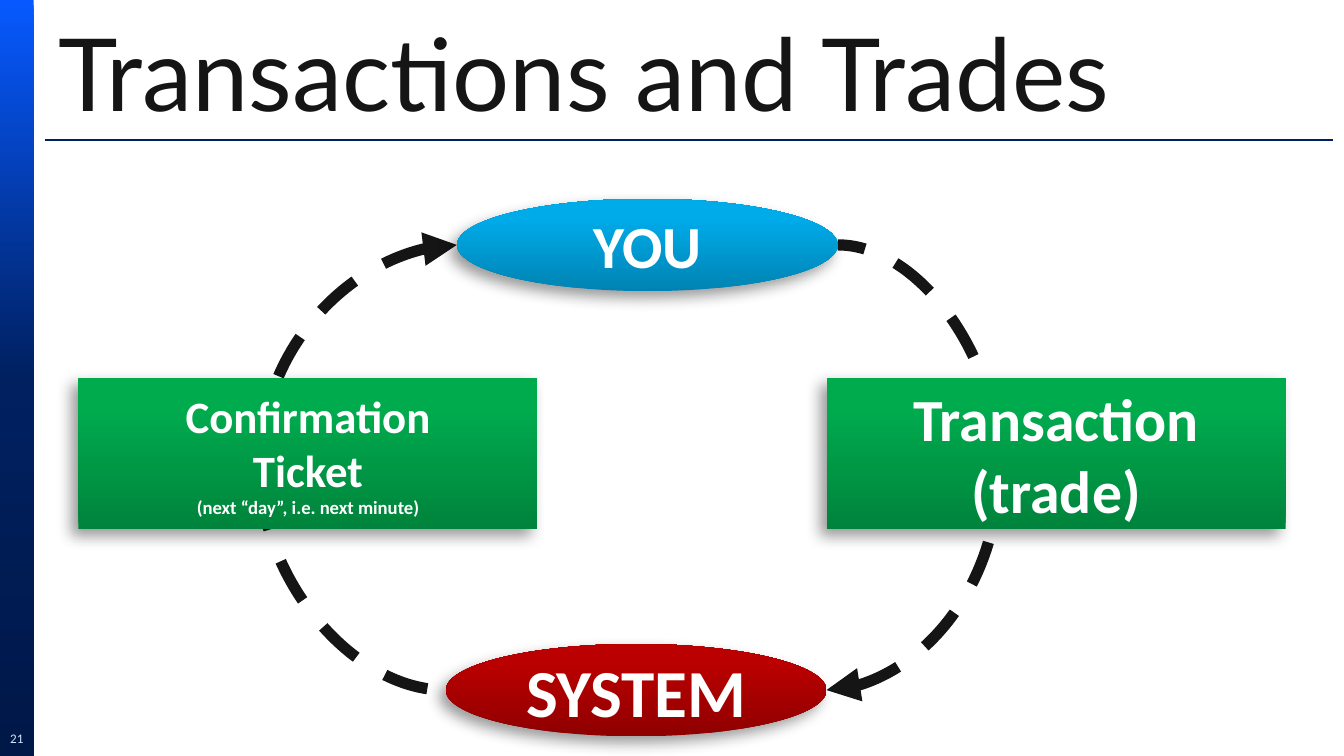
from dataclasses import dataclass

import pptx
import pptx.dml.color
import pptx.enum.dml
import pptx.enum.shapes
import pptx.enum.text
import pptx.oxml
import pptx.oxml.ns
import pptx.util

SHAPE = pptx.enum.shapes.MSO_SHAPE
ALIGN = pptx.enum.text.PP_ALIGN
MIDDLE = pptx.enum.text.MSO_ANCHOR.MIDDLE
qn = pptx.oxml.ns.qn

COLS, ROWS = 120, 67.5
CELL = pptx.util.Inches(10) / COLS


@dataclass(frozen=True)
class Theme:
    title_font: str = "Lato"
    body_font: str = "Calibri"
    ink: str = "151515"
    rule: str = "001F5E"
    white: str = "FFFFFF"
    number: str = "D6E3FF"
    bar: tuple = ((0, "0759FF"), (50, "002060"), (100, "001848"))
    green: tuple = ((0, "00833C"), (80, "00AB4E"), (100, "00AB4E"))
    red: tuple = ((0, "8F0000"), (80, "BA0000"), (100, "BB0000"))
    blue: tuple = ((0, "0083B3"), (80, "00ABE9"), (100, "00ABEA"))
    title_size: int = 54
    system_size: int = 36
    large: int = 32
    medium: int = 24
    small: int = 10
    number_size: int = 7


THEME = Theme()


def grid(*cells):
    return [pptx.util.Emu(round(c * CELL)) for c in cells]


def rgb(value):
    return pptx.dml.color.RGBColor.from_string(value)


def add_xml(parent, tag, body):
    ns = pptx.oxml.ns.nsdecls("a")
    parent.append(pptx.oxml.parse_xml(f"<a:{tag} {ns}>{body}</a:{tag}>"))


def set_text(s, text, sizes, color, font, bold=False, align=ALIGN.CENTER):
    tf = s.text_frame
    tf.vertical_anchor = MIDDLE
    p = tf.paragraphs[0]
    p.text = text
    p.alignment = align
    for r, size in zip(p.runs, sizes):
        r.font.name = font
        r.font.size = pptx.util.Pt(size)
        r.font.bold = bold
        r.font.color.rgb = rgb(color)
    return tf


def set_gradient(s, stops, angle):
    s.fill.gradient()
    s.fill.gradient_angle = angle
    gs_list = s.fill._fill._gradFill.find(qn("a:gsLst"))
    gs_list.clear()
    for position, color in stops:
        gs = pptx.oxml.parse_xml(
            f'<a:gs {pptx.oxml.ns.nsdecls("a")} pos="{position * 1000}">'
            f'<a:srgbClr val="{color}"/></a:gs>')
        gs_list.append(gs)


def add_block(slide, kind, box, stops, angle=90):
    s = slide.shapes.add_shape(kind, *grid(*box))
    set_gradient(s, stops, angle)
    s.line.fill.background()
    s.shadow.inherit = False
    return s


def add_node(slide, kind, box, stops, text, sizes):
    s = add_block(slide, kind, box, stops)
    effects = s._element.spPr.find(qn("a:effectLst"))
    shadow = pptx.oxml.parse_xml(
        f'<a:outerShdw {pptx.oxml.ns.nsdecls("a")} blurRad="101600" dist="63500" '
        'dir="8100000" algn="tr" rotWithShape="0"><a:srgbClr val="000000">'
        '<a:alpha val="40000"/></a:srgbClr></a:outerShdw>')
    effects.append(shadow)
    tf = set_text(s, text, sizes, THEME.white, THEME.body_font, bold=True)
    tf.word_wrap = False
    return s


def add_line(slide, kind, start, end, color, width):
    s = slide.shapes.add_connector(kind, *grid(*start, *end))
    s.line.color.rgb = rgb(color)
    s.line.width = pptx.util.Pt(width)
    add_xml(s._element.spPr, "effectLst", "")
    return s


def add_arc(slide, start, end, bulge):
    s = add_line(slide, pptx.enum.shapes.MSO_CONNECTOR.CURVE, start, end, THEME.ink, 6)
    s.line.dash_style = pptx.enum.dml.MSO_LINE.DASH
    add_xml(s.line._ln, "headEnd", "")
    s.line._ln.find(qn("a:headEnd")).set("type", "triangle")
    share = round(bulge / abs(end[0] - start[0]) * 100000)
    geometry = s._element.spPr.find(qn("a:prstGeom"))
    guides = geometry.get_or_add_avLst()
    add_xml(guides, "gd", "")
    guides[0].set("name", "adj1")
    guides[0].set("fmla", f"val {share}")


def add_title(slide, text):
    s = slide.shapes.title
    s.left, s.top, s.width, s.height = grid(4, 0.75, 115, 11.25)
    set_text(s, text, [THEME.title_size], THEME.ink, THEME.title_font, align=ALIGN.LEFT)


def add_number(slide, text):
    s = slide.shapes.add_textbox(*grid(0, 64.1, 3, 3.6))
    tf = set_text(s, text, [THEME.number_size], THEME.number, THEME.body_font)
    tf.margin_left = tf.margin_right = tf.margin_top = tf.margin_bottom = 0
    tf.word_wrap = False


def main():
    prs = pptx.Presentation()
    prs.slide_width, prs.slide_height = grid(COLS, ROWS)
    slide = prs.slides.add_slide(prs.slide_layouts[5])

    add_block(slide, SHAPE.RECTANGLE, (0, 0, 3, ROWS), THEME.bar, angle=270)
    add_line(slide, pptx.enum.shapes.MSO_CONNECTOR.STRAIGHT,
             (4, 12.5), (119, 12.5), THEME.rule, 0.75)
    add_title(slide, "Transactions and Trades")

    oval_w, oval_h = 34, 8.25
    you_x, you_y = 40.8, 17.75
    system_x, system_y = 39.8, 57.5
    you_mid, system_mid = you_y + oval_h / 2, system_y + oval_h / 2
    add_arc(slide, (system_x + oval_w, system_mid), (you_x + oval_w, you_mid), 15.39)
    add_arc(slide, (you_x, you_mid), (system_x, system_mid), 17.58)

    box_y, box_w, box_h = 33.75, 41, 13.5
    nodes = [
        (SHAPE.RECTANGLE, (73.8, box_y, box_w, box_h), THEME.green,
         "Transaction\v(trade)", [THEME.large] * 2),
        (SHAPE.RECTANGLE, (7, box_y, box_w, box_h), THEME.green,
         "Confirmation\vTicket\v(next “day”, i.e. next minute)",
         [THEME.medium, THEME.medium, THEME.small]),
        (SHAPE.OVAL, (system_x, system_y, oval_w, oval_h), THEME.red,
         "SYSTEM", [THEME.system_size]),
        (SHAPE.OVAL, (you_x, you_y, oval_w, oval_h), THEME.blue,
         "YOU", [THEME.large]),
    ]
    for node in nodes:
        add_node(slide, *node)
    add_number(slide, "21")
    prs.save("out.pptx")


if __name__ == "__main__":
    main()
